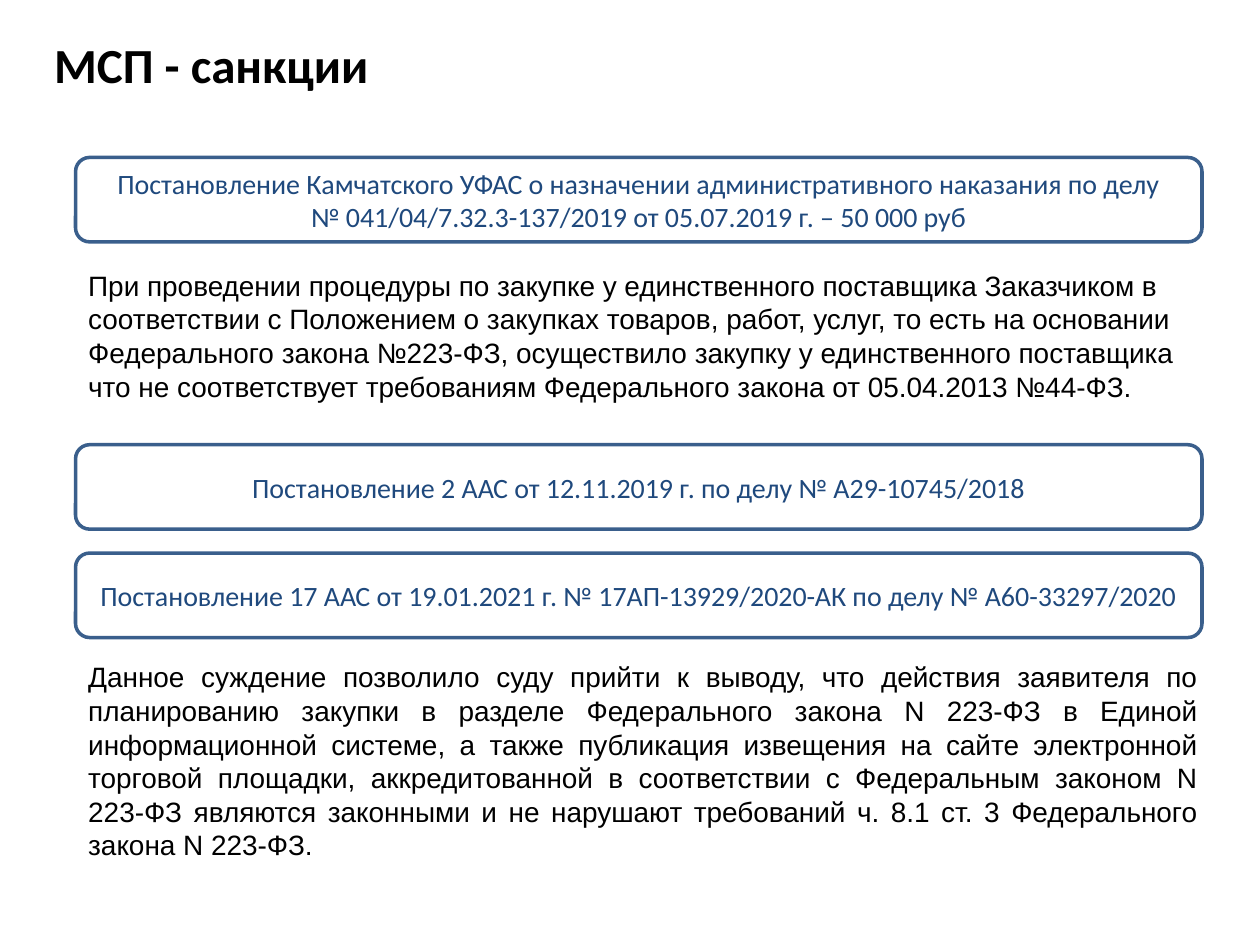
import pptx
from pptx.dml.color import RGBColor
from pptx.enum.shapes import MSO_SHAPE
from pptx.enum.text import MSO_ANCHOR, MSO_AUTO_SIZE, PP_ALIGN
from pptx.util import Inches, Pt
from lxml import etree

# Content
TITLE = "МСП - санкции"
RULINGS = [  # top edge in inches, text
    (1.25, "Постановление Камчатского УФАС о назначении административного наказания по делу\v"
           "№ 041/04/7.32.3-137/2019 от 05.07.2019 г. – 50 000 руб"),
    (3.53, "Постановление 2 ААС от 12.11.2019 г. по делу № А29-10745/2018"),
    (4.39, "Постановление 17 ААС от 19.01.2021 г. № 17АП-13929/2020-АК по делу № А60-33297/2020"),
]
COMMENTS = [  # text, alignment, space before in points
    ("При проведении процедуры по закупке у единственного поставщика Заказчиком в "
     "соответствии с Положением о закупках товаров, работ, услуг, то есть на основании "
     "Федерального закона №223-ФЗ, осуществило закупку у единственного поставщика "
     "что не соответствует требованиям Федерального закона от 05.04.2013 №44-ФЗ.",
     PP_ALIGN.LEFT, 0),
    ("Данное суждение позволило суду прийти к выводу, что действия заявителя по "
     "планированию закупки в разделе Федерального закона N 223-ФЗ в Единой "
     "информационной системе, а также публикация извещения на сайте электронной "
     "торговой площадки, аккредитованной в соответствии с Федеральным законом N "
     "223-ФЗ являются законными и не нарушают требований ч. 8.1 ст. 3 Федерального "
     "закона N 223-ФЗ.",
     PP_ALIGN.JUSTIFY, 147),
]
BLACK, NAVY, OUTLINE = "000000", "1F497D", "3A5F8C"


def color(value):
    return RGBColor.from_string(value)


def place(shape, left, top, width, height):
    shape.left, shape.top = Inches(left), Inches(top)
    shape.width, shape.height = Inches(width), Inches(height)


def style(paragraph, font_name, size, font_color, alignment, bold=False):
    paragraph.alignment = alignment
    for run in paragraph.runs:
        run.font.name = font_name
        run.font.size = Pt(size)
        run.font.bold = bold
        run.font.color.rgb = color(font_color)


presentation = pptx.Presentation()
presentation.slide_width, presentation.slide_height = Inches(10), Inches(7.5)
slide = presentation.slides.add_slide(presentation.slide_layouts[1])
title, body = slide.placeholders

# Title
place(title, 0.43, 0.17, 5.64, 0.72)
frame = title.text_frame
frame.text = TITLE
frame.auto_size = MSO_AUTO_SIZE.NONE
frame.vertical_anchor = MSO_ANCHOR.MIDDLE
frame.margin_left = frame.margin_right = frame.margin_top = frame.margin_bottom = 0
frame.paragraphs[0].line_spacing = 0.93
style(frame.paragraphs[0], "Calibri", 28, BLACK, PP_ALIGN.JUSTIFY, bold=True)

# Comments, spaced to leave room for the rulings between them
place(body, 0.6, 2.08, 9.01, 5.22)
frame = body.text_frame
frame.text = "\n".join(text for text, _, _ in COMMENTS)
frame.auto_size = MSO_AUTO_SIZE.NONE
for paragraph, (_, alignment, space_before) in zip(frame.paragraphs, COMMENTS):
    properties = paragraph._p.get_or_add_pPr()
    properties.set("marL", "0")
    properties.set("indent", "0")
    etree.SubElement(properties, pptx.oxml.ns.qn("a:buNone"))
    paragraph.space_before = Pt(space_before)
    style(paragraph, "Arial", 16, BLACK, alignment)

# Ruling boxes
for top, text in RULINGS:
    box = slide.shapes.add_shape(MSO_SHAPE.ROUNDED_RECTANGLE, Inches(0.6), Inches(top),
                                 Inches(8.94), Inches(0.67))
    box.shadow.inherit = False
    box.fill.background()
    box.line.color.rgb = color(OUTLINE)
    box.line.width = Pt(2)
    box.text_frame.word_wrap = True
    box.text_frame.vertical_anchor = MSO_ANCHOR.MIDDLE
    box.text_frame.text = text
    for paragraph in box.text_frame.paragraphs:
        style(paragraph, "Calibri", 16, NAVY, PP_ALIGN.CENTER)

presentation.save("out.pptx")
